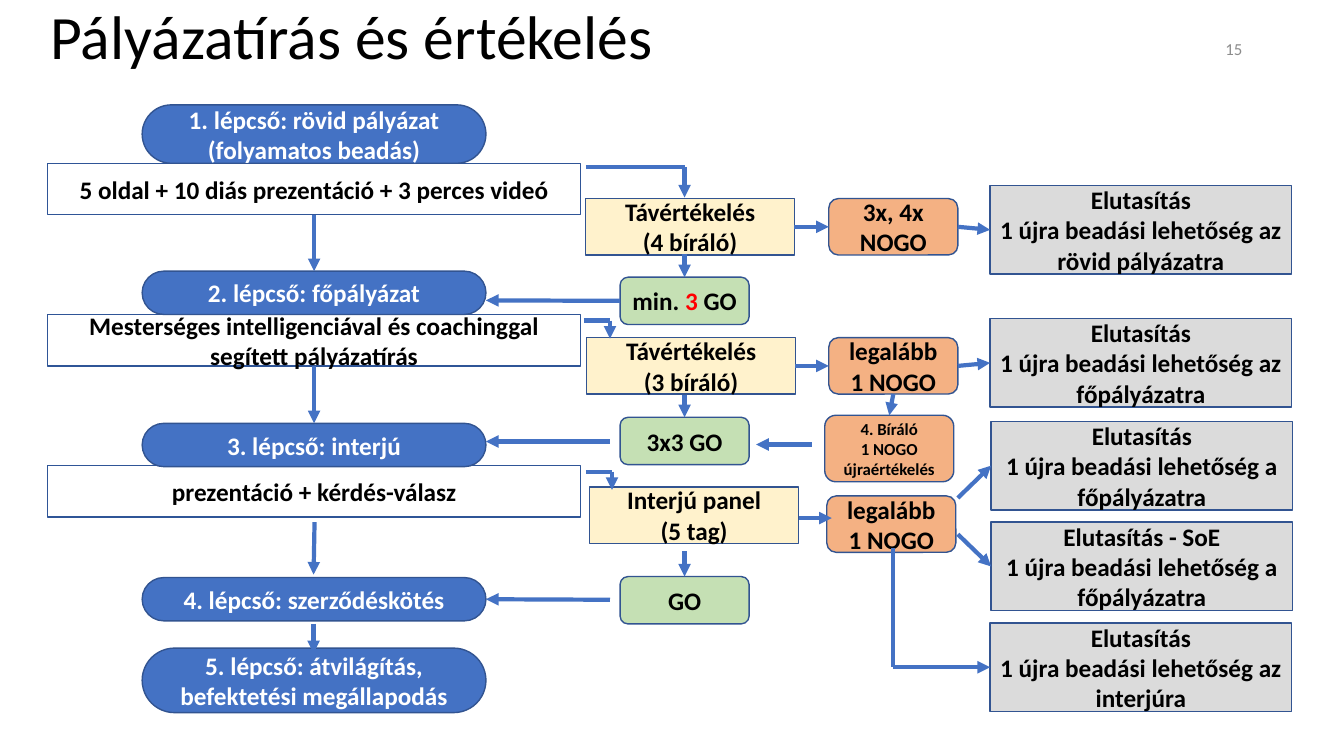
from lxml import etree
from pptx import Presentation
from pptx.dml.color import RGBColor
from pptx.enum.shapes import MSO_CONNECTOR, MSO_SHAPE
from pptx.enum.text import MSO_ANCHOR, MSO_AUTO_SIZE, PP_ALIGN
from pptx.oxml.ns import qn
from pptx.util import Pt

RECT, ROUNDED = MSO_SHAPE.RECTANGLE, MSO_SHAPE.ROUNDED_RECTANGLE
STRAIGHT = MSO_CONNECTOR.STRAIGHT
LEFT, CENTER, RIGHT = PP_ALIGN.LEFT, PP_ALIGN.CENTER, PP_ALIGN.RIGHT
MIDDLE = MSO_ANCHOR.MIDDLE
NO_AUTOFIT = MSO_AUTO_SIZE.NONE
TOP_SIDE, LEFT_SIDE, BOTTOM_SIDE, RIGHT_SIDE = range(4)

PX = 9144
FONT = "Calibri"
COLORS = {
    "black": "000000", "white": "FFFFFF", "red": "FF0000", "gray": "8C8C8C",
    "blue": "4472C4", "outline": "325491", "document": "2F5597",
    "review": "FFF2CC", "go": "C5E0B4", "nogo": "F4B183", "reject": "DBDBDB",
}


def color(name):
    return RGBColor.from_string(COLORS[name])


def px(*lengths):
    return [length * PX for length in lengths]


def write_text(frame, text, size=18, ink="black", bold=True, align=CENTER,
               accent=None, spacing=None):
    frame.word_wrap = True
    frame.auto_size = NO_AUTOFIT
    frame.vertical_anchor = MIDDLE
    for index, line in enumerate(text.split("\n")):
        para = frame.add_paragraph() if index else frame.paragraphs[0]
        para.alignment = align
        para.line_spacing = spacing
        parts = line.partition(accent) if accent else [line]
        for part in parts:
            span = para.add_run()
            span.text = part
            span.font.name = FONT
            span.font.size = Pt(size)
            span.font.bold = bold
            span.font.color.rgb = color("red" if part == accent else ink)


def add_box(page, place, text, kind=RECT, fill=None, line="outline", round_by=None, **style):
    box = page.shapes.add_shape(kind, *px(*place))
    box.shadow.inherit = False
    if fill:
        box.fill.solid()
        box.fill.fore_color.rgb = color(fill)
    else:
        box.fill.background()
    box.line.color.rgb = color(line)
    box.line.width = Pt(1)
    if round_by is not None:
        box.adjustments[0] = round_by
    write_text(box.text_frame, text, **style)
    return box


def add_step(page, top, height, text):
    return add_box(page, (141, top, 341, height), text, ROUNDED, "blue",
                   round_by=0.5, ink="white")


def add_document(page, top, text):
    return add_box(page, (47, top, 529, 51), text, line="document")


def add_review(page, left, top, text):
    return add_box(page, (left, top, 207, 56), text, fill="review")


def add_go(page, top, text, **style):
    return add_box(page, (615, top, 128, 47), text, ROUNDED, "go", **style)


def add_nogo(page, left, top, text, height=56, **style):
    return add_box(page, (left, top, 128, height), text, ROUNDED, "nogo", **style)


def add_rejection(page, left, top, detail, heading="Elutasítás"):
    text = f"{heading}\n1 újra beadási lehetőség {detail}"
    return add_box(page, (left, top, 299, 88), text, fill="reject")


def add_line(page, start, end, arrow=True):
    joined_start = not isinstance(start[0], int)
    joined_end = not isinstance(end[0], int)
    first = (0, 0) if joined_start else start
    last = (0, 0) if joined_end else end
    line = page.shapes.add_connector(STRAIGHT, *px(*first, *last))
    if joined_start:
        line.begin_connect(*start)
    if joined_end:
        line.end_connect(*end)
    line.line.color.rgb = color("blue")
    line.line.width = Pt(3)
    if arrow:
        etree.SubElement(line.line._get_or_add_ln(), qn("a:tailEnd"), type="triangle")
    etree.SubElement(line._element.spPr, qn("a:effectLst"))


def add_elbow(page, start, corner, end):
    add_line(page, start, corner, arrow=False)
    add_line(page, corner, end)


def add_heading(page):
    title = page.shapes.title
    title.left, title.top, title.width, title.height = px(40, -4, 1150, 87)
    write_text(title.text_frame, "Pályázatírás és értékelés", size=44, bold=False,
               align=LEFT, spacing=0.9)
    number = page.shapes.add_textbox(*px(942, 12, 300, 73))
    write_text(number.text_frame, "15", size=12, ink="gray", bold=False, align=RIGHT)


def add_flow(page):
    short_document = add_document(page, 162, "5 oldal + 10 diás prezentáció + 3 perces videó")
    main_document = add_document(
        page, 312, "Mesterséges intelligenciával és coachinggal segített pályázatírás")
    add_document(page, 462, "prezentáció + kérdés-válasz")

    add_step(page, 104, 58, "1. lépcső: rövid pályázat (folyamatos beadás)")
    main_step = add_step(page, 269, 43, "2. lépcső: főpályázat")
    interview_step = add_step(page, 420, 43, "3. lépcső: interjú")
    contract_step = add_step(page, 573, 43, "4. lépcső: szerződéskötés")
    add_step(page, 643, 64, "5. lépcső: átvilágítás, befektetési megállapodás")

    short_review = add_review(page, 581, 197, "Távértékelés\n(4 bíráló)")
    main_review = add_review(page, 582, 335, "Távértékelés\n(3 bíráló)")
    add_review(page, 585, 483, "Interjú panel\n(5 tag)")

    short_go = add_go(page, 275, "min. 3 GO", accent="3")
    main_go = add_go(page, 414, "3x3 GO")
    panel_go = add_go(page, 572, "GO")

    short_nogo = add_nogo(page, 822, 197, "3x, 4x NOGO")
    main_nogo = add_nogo(page, 822, 335, "legalább 1 NOGO")
    add_nogo(page, 820, 492, "legalább 1 NOGO")
    fourth_reviewer = add_nogo(page, 818, 412, "4. Bíráló\n1 NOGO újraértékelés",
                               height=66, size=12)

    short_rejection = add_rejection(page, 982, 184, "az rövid pályázatra")
    main_rejection = add_rejection(page, 982, 316, "az főpályázatra")
    panel_rejection = add_rejection(page, 983, 418, "a főpályázatra")
    seal_rejection = add_rejection(page, 983, 518, "a főpályázatra", "Elutasítás - SoE")
    interview_rejection = add_rejection(page, 982, 618, "az interjúra")

    for start, end in [
        ((short_document, BOTTOM_SIDE), (main_step, TOP_SIDE)),
        ((main_document, BOTTOM_SIDE), (interview_step, TOP_SIDE)),
        ((312, 518), (311, 570)),
        ((311, 619), (311, 648)),
        ((short_go, LEFT_SIDE), (482, 298)),
        ((605, 438), (482, 438)),
        ((605, 595), (contract_step, RIGHT_SIDE)),
        ((679, 252), (short_go, TOP_SIDE)),
        ((679, 392), (main_go, TOP_SIDE)),
        ((679, 547), (panel_go, TOP_SIDE)),
        ((short_review, RIGHT_SIDE), (short_nogo, LEFT_SIDE)),
        ((main_review, RIGHT_SIDE), (main_nogo, LEFT_SIDE)),
        ((792, 514), (825, 514)),
        ((short_nogo, RIGHT_SIDE), (short_rejection, LEFT_SIDE)),
        ((main_nogo, RIGHT_SIDE), (main_rejection, LEFT_SIDE)),
        ((main_nogo, BOTTOM_SIDE), (fourth_reviewer, TOP_SIDE)),
        ((805, 441), (750, 441)),
        ((950, 494), (panel_rejection, LEFT_SIDE)),
        ((950, 530), (seal_rejection, LEFT_SIDE)),
    ]:
        add_line(page, start, end)

    add_elbow(page, (581, 166), (679, 166), (679, 196))
    add_elbow(page, (579, 318), (605, 318), (605, 336))
    add_elbow(page, (581, 468), (607, 468), (607, 486))
    add_elbow(page, (886, 544), (886, 662), (interview_rejection, LEFT_SIDE))


def main():
    deck = Presentation()
    deck.slide_width, deck.slide_height = px(1333, 750)
    page = deck.slides.add_slide(deck.slide_layouts[5])
    add_heading(page)
    add_flow(page)
    deck.save("out.pptx")


if __name__ == "__main__":
    main()
